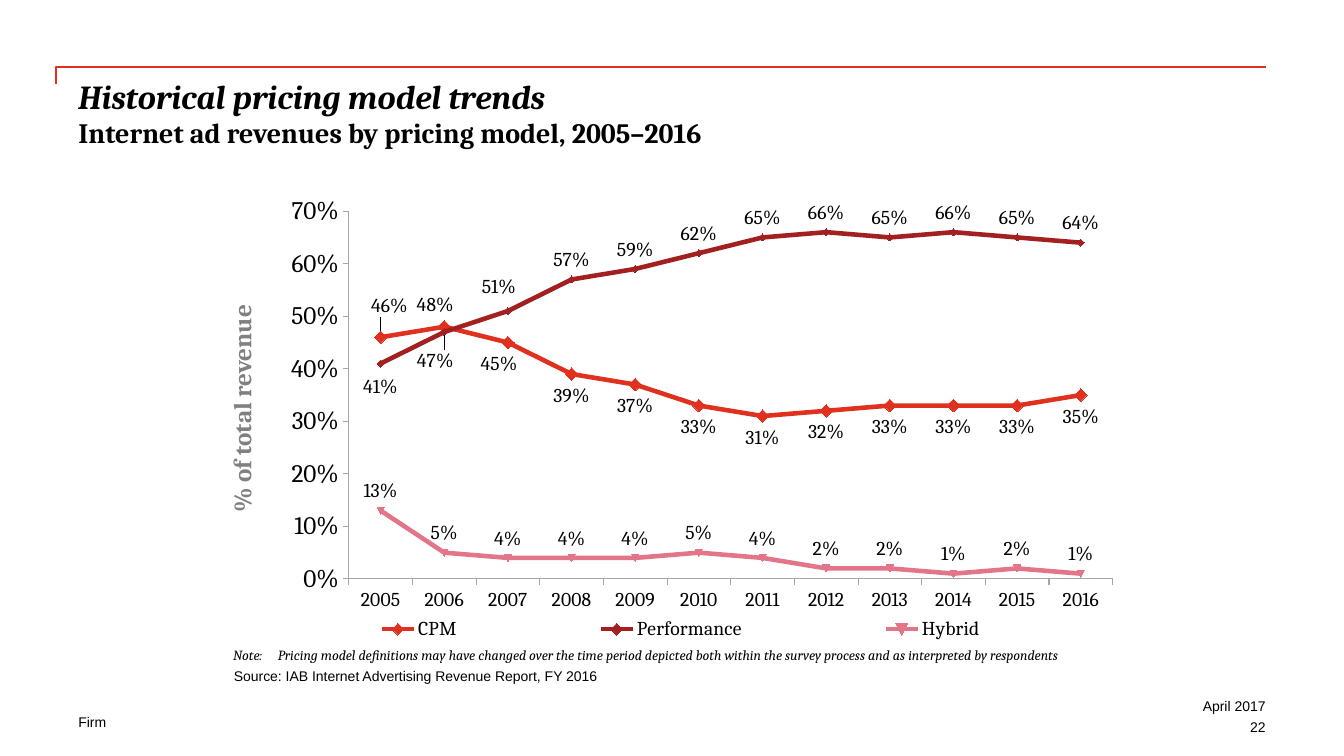
from lxml import etree
from pptx import Presentation
from pptx.chart.data import CategoryChartData
from pptx.dml.color import RGBColor
from pptx.enum.chart import (XL_CHART_TYPE, XL_LABEL_POSITION, XL_LEGEND_POSITION,
                             XL_MARKER_STYLE, XL_TICK_MARK)
from pptx.enum.text import MSO_ANCHOR, PP_ALIGN
from pptx.oxml.ns import qn
from pptx.util import Pt

COLORS = {"text": "000000", "rule": "E0301E", "axis": "A6A6A6", "axis_title": "808080",
          "CPM": "E0301E", "Performance": "A32020", "Hybrid": "E27588"}
TITLE = "Historical pricing model trends"
SUBTITLE = "Internet ad revenues by pricing model, 2005–2016"
AXIS_TITLE = "% of total revenue"
NOTE = ("Note:\tPricing model definitions may have changed over the time period depicted "
        "both within the survey process and as interpreted by respondents")
SOURCE = "Source: IAB Internet Advertising Revenue Report, FY 2016"
YEARS = [str(year) for year in range(2005, 2017)]
PERCENTAGES = {
    "CPM": [46, 48, 45, 39, 37, 33, 31, 32, 33, 33, 33, 35],
    "Performance": [41, 47, 51, 57, 59, 62, 65, 66, 65, 66, 65, 64],
    "Hybrid": [13, 5, 4, 4, 4, 5, 4, 2, 2, 1, 2, 1],
}
ABOVE, BELOW = XL_LABEL_POSITION.ABOVE, XL_LABEL_POSITION.BELOW
LABEL_SIDES = {"CPM": BELOW, "Performance": ABOVE, "Hybrid": ABOVE}
# Labels moved off the crossing lines: side, then shift as a share of the chart size
MOVED_LABELS = {
    "CPM": [(ABOVE, 0.01, -0.02), (ABOVE, -0.01, 0), (BELOW, -0.01, 0)],
    "Performance": [(BELOW, 0, 0.01), (BELOW, -0.01, 0.02), (ABOVE, -0.01, -0.01)],
}
CHART_BOX = (162, 138, 636, 348)
PLOT_LAYOUT = {"layoutTarget": "inner", "xMode": "edge", "yMode": "edge",
               "x": 0.137, "y": 0.037, "w": 0.858, "h": 0.755}
LEGEND_LAYOUT = {"xMode": "edge", "yMode": "edge", "x": 0.02, "y": 0.86, "w": 0.98, "h": 0.07}


def rgb(name):
    return RGBColor.from_string(COLORS[name])


def style_font(font, size, name="Cambria", color="text", bold=False, italic=False):
    font.size, font.name, font.bold, font.italic = Pt(size), name, bold, italic
    font.color.rgb = rgb(color)


def add_text(slide, text, box, size, align=PP_ALIGN.LEFT, anchor=MSO_ANCHOR.TOP, **style):
    shape = slide.shapes.add_textbox(*map(Pt, box))
    frame = shape.text_frame
    frame.word_wrap, frame.vertical_anchor = True, anchor
    frame.margin_left = frame.margin_top = frame.margin_right = frame.margin_bottom = 0
    frame.text = text
    paragraph = frame.paragraphs[0]
    paragraph.alignment = align
    for run in paragraph.runs:
        style_font(run.font, size, **style)
    return shape


def set_layout(parent, values, after=None):
    """Give a chart element a manual layout, placed after the named child or first."""
    for old_layout in parent.findall(qn("c:layout")):
        parent.remove(old_layout)
    layout = etree.Element(qn("c:layout"))
    manual = etree.SubElement(layout, qn("c:manualLayout"))
    for name, value in values.items():
        etree.SubElement(manual, qn("c:" + name)).set("val", str(value))
    if after is None:
        parent.insert(0, layout)
    else:
        parent.find(qn(after)).addnext(layout)


def style_axis(axis, size):
    axis.has_major_gridlines = False
    axis.major_tick_mark = XL_TICK_MARK.OUTSIDE
    axis.minor_tick_mark = XL_TICK_MARK.NONE
    axis.format.line.color.rgb = rgb("axis")
    axis.format.line.width = Pt(0.75)
    style_font(axis.tick_labels.font, size)


def style_series(series):
    series.smooth = False
    series.format.line.color.rgb = rgb(series.name)
    series.format.line.width = Pt(3.25)
    marker_format = series.marker.format
    marker_format.fill.solid()
    marker_format.fill.fore_color.rgb = rgb(series.name)
    marker_format.line.color.rgb = rgb(series.name)
    if series.name == "CPM":
        series.marker.style, series.marker.size = XL_MARKER_STYLE.DIAMOND, 9
    labels = series.data_labels
    labels.show_value = True
    labels.number_format, labels.number_format_is_linked = "0%", False
    labels.position = LABEL_SIDES[series.name]
    style_font(labels.font, 14)
    for index, (side, x, y) in enumerate(MOVED_LABELS.get(series.name, [])):
        label = series.points[index].data_label
        style_font(label.font, 14)
        label.position = side
        element = labels._element.findall(qn("c:dLbl"))[index]
        set_layout(element, {"x": x, "y": y}, after="c:idx")


def add_pricing_chart(slide):
    data = CategoryChartData(number_format="0%")
    data.categories = YEARS
    for name, values in PERCENTAGES.items():
        data.add_series(name, [value / 100 for value in values])
    chart = slide.shapes.add_chart(XL_CHART_TYPE.LINE_MARKERS, *map(Pt, CHART_BOX), data).chart
    chart.has_title = False
    style_font(chart.font, 18, name="Arial")
    chart.plots[0].vary_by_categories = False
    for series in chart.series:
        style_series(series)
    style_axis(chart.category_axis, 14)
    value_axis = chart.value_axis
    style_axis(value_axis, 18)
    value_axis.minimum_scale, value_axis.maximum_scale, value_axis.major_unit = 0, 0.7, 0.1
    value_axis.tick_labels.number_format = "0%"
    value_axis.tick_labels.number_format_is_linked = False
    chart.has_legend = True
    legend = chart.legend
    legend.position, legend.include_in_layout = XL_LEGEND_POSITION.RIGHT, False
    style_font(legend.font, 14)
    set_layout(legend._element, LEGEND_LAYOUT, after="c:legendPos")
    set_layout(chart._chartSpace.chart.plotArea, PLOT_LAYOUT)


def add_title_rule(slide):
    builder = slide.shapes.build_freeform(Pt(40), Pt(60))
    builder.add_line_segments([(Pt(40), Pt(48)), (Pt(904), Pt(48))], close=False)
    rule = builder.convert_to_shape()
    rule.shadow.inherit = False
    rule.fill.background()
    rule.line.color.rgb = rgb("rule")
    rule.line.width = Pt(1)


def main():
    presentation = Presentation()
    presentation.slide_width, presentation.slide_height = Pt(960), Pt(540)
    slide = presentation.slides.add_slide(presentation.slide_layouts[6])

    add_title_rule(slide)
    title = add_text(slide, TITLE + "\v" + SUBTITLE, (56, 54, 848, 72), 24, bold=True)
    heading, subheading = title.text_frame.paragraphs[0].runs
    heading.font.italic = True
    subheading.font.size = Pt(20)

    add_pricing_chart(slide)
    axis_title = add_text(slide, AXIS_TITLE, (78, 280, 191, 24), 18, PP_ALIGN.CENTER,
                          color="axis_title", bold=True)
    axis_title.rotation = 270

    note = add_text(slide, NOTE, (166.5, 461.5, 663, 24), 10, italic=True)
    properties = note.text_frame.paragraphs[0]._p.get_or_add_pPr()
    properties.set("marL", str(Pt(32)))
    properties.set("indent", str(-Pt(32)))

    add_text(slide, SOURCE, (167, 477, 414, 12), 10, anchor=MSO_ANCHOR.BOTTOM, name="Arial")
    add_text(slide, "Firm", (56, 510, 272, 12), 10, name="Arial")
    add_text(slide, "April 2017", (744, 498, 160, 12), 10, PP_ALIGN.RIGHT, name="Arial")
    add_text(slide, "22", (744, 513, 160, 12), 10, PP_ALIGN.RIGHT, name="Arial")
    presentation.save("out.pptx")


if __name__ == "__main__":
    main()
